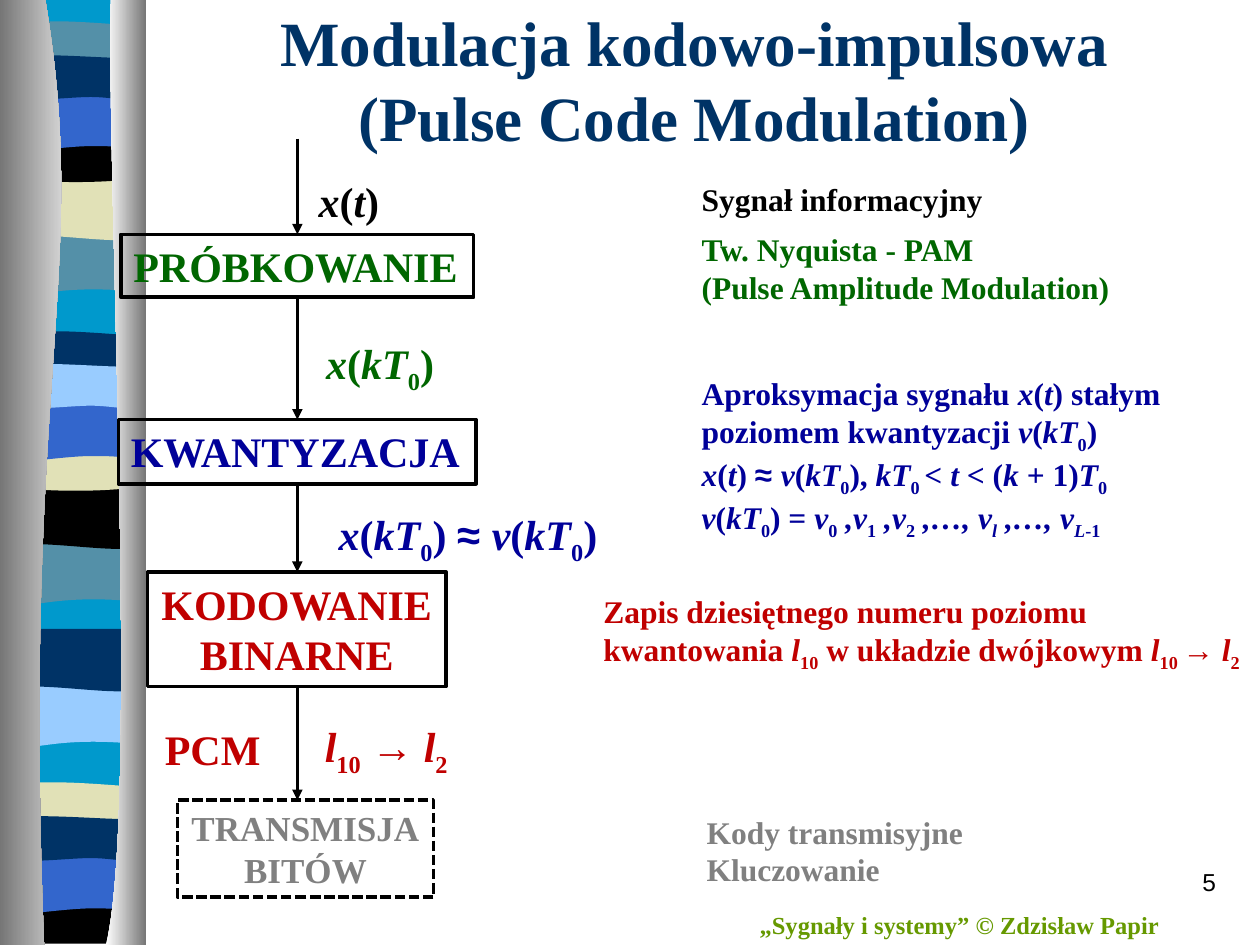
"""Builds a slide on pulse code modulation: a block chain with notes beside a wavy side band."""
from dataclasses import dataclass

from lxml.etree import SubElement
from pptx import Presentation
from pptx.dml.color import RGBColor
from pptx.enum.dml import MSO_LINE
from pptx.enum.shapes import MSO_CONNECTOR, MSO_SHAPE
from pptx.enum.text import MSO_ANCHOR, MSO_AUTO_SIZE, PP_ALIGN
from pptx.oxml.ns import qn
from pptx.util import Pt

PX = 9144


@dataclass(frozen=True)
class Theme:
    navy: str = "003366"
    cyan: str = "0099CC"
    teal: str = "5490A8"
    sand: str = "E1E1B7"
    royal: str = "3366CC"
    sky: str = "99CCFF"
    black: str = "000000"
    white: str = "FFFFFF"
    steel: str = "767676"
    olive: str = "669900"
    green: str = "006600"
    blue: str = "000099"
    red: str = "C00000"
    gray: str = "808080"
    title: int = 36
    label: int = 24
    block: int = 20
    note: int = 18
    small: int = 14
    serif: str = "Times New Roman"
    sans: str = "Arial"


THEME = Theme()
LEFT, CENTER, RIGHT = PP_ALIGN.LEFT, PP_ALIGN.CENTER, PP_ALIGN.RIGHT

OUTLINES = {
    "field": [(114, 0), (114, 747), (5, 747), (5, 0)],
    "swell": [(114, 0), (114, 47), (39, 39, 24, 55, 5, 47), (5, 0)],
    "roll": [(114, 0), (114, 47), (96, 55, 39, 42, 6, 47), (6, 0)],
    "lens": [(114, 5), (114, 29), (96, 34, 24, 34, 5, 29), (5, 5),
             (12, 0, 29, 1, 47, 1), (65, 1, 100, 4, 114, 5)],
    "crest": [(114, 0), (114, 32), (96, 38, 24, 38, 6, 32), (6, 0), (72, 5, 91, 0, 114, 0)],
    "base": [(113, 0), (113, 37), (6, 37), (5, 0), (71, 5, 90, 0, 113, 0)],
    "arch": [(114, 0), (114, 47), (97, 42, 90, 42, 72, 42), (54, 42, 22, 47, 6, 47), (6, 0)],
    "ribbon": [(114, 5), (114, 36), (107, 41, 90, 36, 72, 36), (54, 36, 17, 41, 5, 36),
               (5, 5), (20, 0, 78, 5, 96, 5), (115, 5, 110, 5, 114, 5)],
    "left pillar": [(36, 0), (72, 216, 17, 296, 35, 750), (0, 750), (0, 0)],
    "right pillar": [(88, 0), (84, 125, 111, 646, 84, 750), (116, 750), (116, 0)],
}
BANDS = [
    ("field", 0, THEME.cyan),
    ("swell", 185, THEME.teal), ("roll", 141, THEME.sand), ("lens", 16, THEME.teal),
    ("crest", 108, THEME.black), ("arch", 74, THEME.royal), ("ribbon", 41, THEME.navy),
    ("swell", 431, THEME.teal), ("roll", 386, THEME.black), ("lens", 262, THEME.navy),
    ("crest", 353, THEME.sand), ("arch", 320, THEME.royal), ("ribbon", 286, THEME.sky),
    ("swell", 544, THEME.sky), ("roll", 499, THEME.navy), ("lens", 620, THEME.sand),
    ("base", 712, THEME.black), ("arch", 679, THEME.royal), ("ribbon", 645, THEME.navy),
    ("left pillar", 0, (THEME.steel, THEME.white)),
    ("right pillar", 0, (THEME.white, THEME.steel)),
]

AXIS, CHAIN_TOP = 236, 110
BLOCKS = [
    ("PRÓBKOWANIE", (96, 186, 280, 50), THEME.label, THEME.green, LEFT, False),
    ("KWANTYZACJA", (94, 333, 284, 51), THEME.label, THEME.blue, LEFT, False),
    ("KODOWANIE\vBINARNE", (117, 454, 237, 91), THEME.label, THEME.red, CENTER, False),
    ("TRANSMISJA\vBITÓW", (141, 635, 203, 77), THEME.block, THEME.gray, CENTER, True),
]

LABELS = [
    ("„Sygnały i systemy” © Zdzisław Papir", (593, 717, 341, 34), THEME.small, THEME.olive, False),
    ("*x*(*t*)", (243, 134, 69, 50), THEME.label, THEME.black, False),
    ("PCM", (121, 569, 97, 50), THEME.label, THEME.red, False),
    ("*x*(*kT*_0_)", (249, 263, 108, 50), THEME.label, THEME.green, False),
    ("*x*(*kT*_0_) ~≈ ~*v*(*kT*_0_)", (259, 399, 237, 50), THEME.label, THEME.blue, True),
    ("*l*_10_ → *l*_2_", (248, 567, 123, 50), THEME.label, THEME.red, False),
    ("Sygnał informacyjny", (547, 138, 245, 40), THEME.note, THEME.black, False),
    ("Tw. Nyquista - PAM\v(Pulse Amplitude Modulation)",
     (547, 178, 347, 71), THEME.note, THEME.green, False),
    ("Aproksymacja sygnału *x*(*t*) stałym poziomem kwantyzacji *v*(*kT*_0_)\v"
     "*x*(*t*) ~≈ ~*v*(*kT*_0_), *kT*_0 _< *t *< (*k* + 1)*T*_0_\n"
     "*v*(*kT*_0_) = *v*_0_* ,v*_1_* ,v*_2_* ,…, v_l_ ,…, v_L*-1_",
     (547, 292, 407, 131), THEME.note, THEME.blue, True),
    ("Zapis dziesiętnego numeru poziomu kwantowania *l*_10_ w układzie dwójkowym "
     "*l*_10 _→ *l*_2_", (469, 465, 537, 71), THEME.note, THEME.red, True),
    ("Kody transmisyjne\nKluczowanie", (551, 640, 434, 71), THEME.note, THEME.gray, True),
]


def emu(lengths):
    return [length * PX for length in lengths]


def color(code):
    return RGBColor.from_string(code)


def bend(shape, outline):
    """Turn each run of three line steps that stands for a curve into one cubic step."""
    steps = iter(shape._element.findall(".//" + qn("a:lnTo")))
    for entry in outline[1:]:
        step = next(steps)
        if len(entry) == 6:
            step.tag = qn("a:cubicBezTo")
            for _ in range(2):
                extra = next(steps)
                step.append(extra[0])
                extra.getparent().remove(extra)


def add_band(slide, name, top, fill):
    outline = OUTLINES[name]
    points = [(entry[i] * PX, (entry[i + 1] + top) * PX)
              for entry in outline for i in range(0, len(entry), 2)]
    builder = slide.shapes.build_freeform(*points[0])
    builder.add_line_segments(points[1:], close=False)
    shape = builder.convert_to_shape()
    bend(shape, outline)
    SubElement(shape._element.find(".//" + qn("a:path")), qn("a:close"))
    shape.shadow.inherit = False
    shape.line.fill.background()
    if isinstance(fill, str):
        shape.fill.solid()
        shape.fill.fore_color.rgb = color(fill)
        return
    shape.fill.gradient()
    shape.fill.gradient_angle = 0
    for stop, code in zip(shape.fill.gradient_stops, fill):
        stop.color.rgb = color(code)


def add_run(paragraph, text, size, code, bold, font, italic, subscript):
    run = paragraph.add_run()
    run.text = text
    run.font.size, run.font.bold, run.font.italic = Pt(size), bold, italic
    run.font.name = font
    run.font.color.rgb = color(code)
    if subscript:
        run._r.get_or_add_rPr().set("baseline", "-25000")


def write(shape, text, size, code, align=LEFT, wrap=False, bold=True, font=THEME.serif,
          anchor=MSO_ANCHOR.TOP):
    """Write marked text: * switches italic, _ subscript, ~ the sans font."""
    frame = shape.text_frame
    frame.word_wrap, frame.auto_size, frame.vertical_anchor = wrap, MSO_AUTO_SIZE.NONE, anchor
    for index, line in enumerate(text.split("\n")):
        paragraph = frame.add_paragraph() if index else frame.paragraphs[0]
        paragraph.alignment = align
        active, pending = set(), ""
        for mark in line + "\0":
            if mark not in "*_~\v\0":
                pending += mark
                continue
            if pending:
                add_run(paragraph, pending, size, code, bold,
                        THEME.sans if "~" in active else font, "*" in active, "_" in active)
                pending = ""
            if mark == "\v":
                paragraph.add_line_break()
            else:
                active ^= {mark}


def add_block(slide, text, place, size, code, align, dashed):
    shape = slide.shapes.add_shape(MSO_SHAPE.RECTANGLE, *emu(place))
    shape.shadow.inherit = False
    shape.fill.background()
    shape.line.color.rgb = color(THEME.black)
    shape.line.width = Pt(2)
    if dashed:
        shape.line.dash_style = MSO_LINE.SQUARE_DOT
    write(shape, text, size, code, align)


def add_arrow(slide, top, bottom):
    arrow = slide.shapes.add_connector(MSO_CONNECTOR.STRAIGHT, *emu((AXIS, top, AXIS, bottom)))
    arrow.line.color.rgb = color(THEME.black)
    arrow.line.width = Pt(2)
    SubElement(arrow.line._get_or_add_ln(), qn("a:tailEnd"), type="triangle")
    SubElement(arrow._element.spPr, qn("a:effectLst"))


def main():
    presentation = Presentation()
    presentation.slide_width, presentation.slide_height = emu((1000, 750))
    slide = presentation.slides.add_slide(presentation.slide_layouts[6])
    for band in BANDS:
        add_band(slide, *band)
    title = slide.shapes.add_textbox(*emu((126, 0, 850, 125)))
    write(title, "Modulacja kodowo-impulsowa\v(Pulse Code Modulation)", THEME.title, THEME.navy,
          CENTER, True, anchor=MSO_ANCHOR.MIDDLE)
    start = CHAIN_TOP
    for block in BLOCKS:
        add_block(slide, *block)
        _, top, _, height = block[1]
        add_arrow(slide, start, top)
        start = top + height
    for text, place, size, code, wrap in LABELS:
        write(slide.shapes.add_textbox(*emu(place)), text, size, code, wrap=wrap)
    number = slide.shapes.add_textbox(*emu((767, 683, 208, 50)))
    write(number, "5", THEME.small, THEME.black, RIGHT, True, False, THEME.sans)
    presentation.save("out.pptx")


if __name__ == "__main__":
    main()
